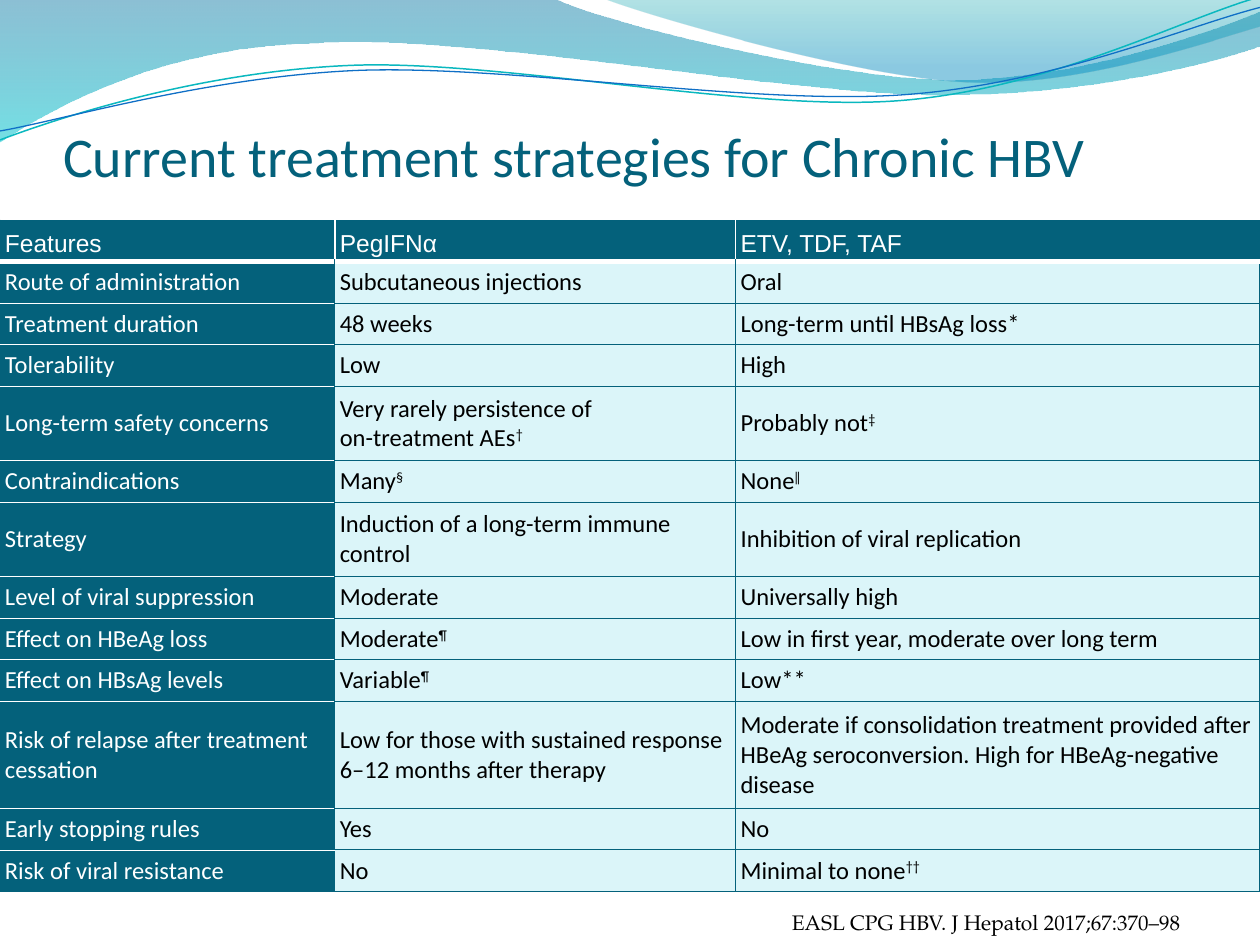
from math import cos, radians, sin
from lxml.etree import SubElement as Sub
from pptx import Presentation
from pptx.dml.color import RGBColor as RGB
from pptx.enum.text import MSO_ANCHOR as Anchor, MSO_AUTO_SIZE as Fit, PP_ALIGN as Align
from pptx.oxml.ns import qn
from pptx.util import Cm, Pt

TEAL = RGB(0x04, 0x61, 0x7B)
PALE = RGB(0xDB, 0xF5, 0xF9)
WHITE = RGB(0xFF, 0xFF, 0xFF)
BLACK = RGB(0, 0, 0)
AQUA = RGB(0x0A, 0xB8, 0xBF)
BLUE = RGB(0x0F, 0x6F, 0xC6)
DEEP = RGB(0x00, 0x74, 0xA1)
CYAN = RGB(0x00, 0xC6, 0xCF)
SEA = RGB(0x00, 0xA1, 0xA9)
SKY = RGB(0x00, 0x8B, 0xBF)

# Outlines in cm: a pair is a straight step, six numbers are a curve
BAND = [(0, 0), (11.18, -0.03), (12.09, 0.43, 16.87, 1.6, 19.25, 1.6),
        (21.67, 1.6, 24.33, 0.66, 25.4, 0.23), (25.43, 0.91),
        (24.97, 1.12, 22.1, 1.93, 18.95, 1.91), (15.8, 1.91, 9.7, 0.71, 6.53, 0.86),
        (3.28, 0.91, 1.17, 2.11, -0.03, 2.87)]
SWOOSH = [(12.17, -0.03), (12.93, 0.28, 17.32, 1.57, 19.53, 1.65),
          (21.74, 1.75, 24.41, 0.81, 25.4, 0.53), (25.4, 0)]
UPPER = [(0, 2.82), (1.22, 2.36, 4.01, 1.45, 7.04, 1.32),
         (10.03, 1.19, 15.06, 2.26, 18.11, 2.03), (21.16, 1.8, 23.83, 0.38, 25.35, -0.05)]
LOWER = [(0, 2.64), (1.19, 2.44, 4.17, 1.55, 7.19, 1.42),
         (10.24, 1.3, 15.16, 2.13, 18.21, 1.91), (21.23, 1.7, 23.9, 0.53, 25.4, 0.15)]
TILT = -2.7
HUB = (12.68, 1.46)

# Table text: a caret starts a superscript
ROWS = [
    ("Features", "PegIFNα", "ETV, TDF, TAF"),
    ("Route of administration", "Subcutaneous injections", "Oral"),
    ("Treatment duration", "48 weeks", "Long-term until HBsAg loss*"),
    ("Tolerability", "Low", "High"),
    ("Long-term safety concerns", "Very rarely persistence of \non-treatment AEs^†",
     "Probably not^‡"),
    ("Contraindications", "Many^§", "None^‖"),
    ("Strategy", "Induction of a long-term immune control", "Inhibition of viral replication"),
    ("Level of viral suppression", "Moderate", "Universally high"),
    ("Effect on HBeAg loss", "Moderate^¶", "Low in first year, moderate over long term"),
    ("Effect on HBsAg levels", "Variable^¶", "Low**"),
    ("Risk of relapse after treatment cessation",
     "Low for those with sustained response 6–12 months after therapy",
     "Moderate if consolidation treatment provided after HBeAg seroconversion. "
     "High for HBeAg-negative disease"),
    ("Early stopping rules", "Yes", "No"),
    ("Risk of viral resistance", "No", "Minimal to none^††"),
]
WIDTHS = (6.75, 8.08, 10.57)
HIGH = 13.53
TALL = {4: 1.5, 6: 1.5, 10: 2.16}
LOW = (HIGH - sum(TALL.values())) / (len(ROWS) - len(TALL))


def pairs(step):
    return list(zip(step[::2], step[1::2]))


def turn(steps, angle):
    """Turn all points of the steps about the hub."""
    c, s = cos(radians(angle)), sin(radians(angle))
    (hx, hy), out = HUB, []
    for step in steps:
        spots = [(x - hx, y - hy) for x, y in pairs(step)]
        out.append(sum(((hx + x * c - y * s, hy + x * s + y * c) for x, y in spots), ()))
    return out


def add_path(slide, steps, close):
    """Draw the steps as one outline with true curves."""
    ends = [(Cm(step[-2]), Cm(step[-1])) for step in steps]
    pen = slide.shapes.build_freeform(*ends[0])
    pen.add_line_segments(ends[1:], close=close)
    shape = pen.convert_to_shape()
    shape.shadow.inherit = False
    for node, step in zip(list(shape.element.iter(qn("a:lnTo"))), steps[1:]):
        if len(step) == 6:
            curve = node.makeelement(qn("a:cubicBezTo"))
            for x, y in pairs(step):
                Sub(curve, qn("a:pt"), x=str(Cm(x) - shape.left), y=str(Cm(y) - shape.top))
            node.getparent().replace(node, curve)
    return shape


def add_wave(slide, steps, stops):
    """Filled wave; each stop is position, colour, opacity in percent."""
    shape = add_path(slide, steps, True)
    shape.line.fill.background()
    shape.fill.gradient()
    shape.fill.gradient_angle = 270
    for stop, (pos, color, _) in zip(shape.fill.gradient_stops, stops):
        stop.position = pos
        stop.color.rgb = color
    for node, (_, _, alpha) in zip(shape.element.iter(qn("a:srgbClr")), stops):
        Sub(node, qn("a:alpha"), val=str(alpha * 1000))


def add_curve(slide, steps, color, width):
    shape = add_path(slide, turn(steps, -TILT), False)
    shape.rotation = TILT
    shape.fill.background()
    shape.line.color.rgb = color
    shape.line.width = Pt(width)


def style(para, font, size, color):
    para.font.name = font
    para.font.size = Pt(size)
    para.font.color.rgb = color


def set_text(holder, text, box, pads, font, size, color, align):
    """Move a placeholder to the front and fill it."""
    holder.left, holder.top, holder.width, holder.height = map(Cm, box)
    frame = holder.text_frame
    frame.text = text
    frame.word_wrap = True
    frame.auto_size = Fit.NONE
    frame.vertical_anchor = Anchor.BOTTOM
    (frame.margin_left, frame.margin_top,
     frame.margin_right, frame.margin_bottom) = map(Cm, pads)
    para = frame.paragraphs[0]
    para.alignment = align
    para.space_before = Pt(0)
    style(para, font, size, color)
    props = para._p.get_or_add_pPr()
    props.set("marL", "0")
    props.set("indent", "0")
    props.insert_element_before(props.makeelement(qn("a:buNone")), "a:tabLst", "a:defRPr")
    holder.element.getparent().append(holder.element)


def edges(row, col):
    """Left, right, top and bottom border of a cell."""
    outer, thick = (TEAL, 1), (WHITE, 3)
    inner = (WHITE, 1) if row == 0 else (TEAL, 0.75)
    rule = (WHITE, 0.5) if col == 0 else (TEAL, 0.75)
    return (outer if col == 0 else inner,
            outer if col == len(WIDTHS) - 1 else inner,
            {0: outer, 1: thick}.get(row, rule),
            {0: thick, len(ROWS) - 1: outer}.get(row, rule))


def set_cell(cell, text, row, col):
    dark = row == 0 or col == 0
    cell.fill.solid()
    cell.fill.fore_color.rgb = TEAL if dark else PALE
    cell.vertical_anchor = Anchor.BOTTOM if row == 0 else Anchor.MIDDLE
    cell.margin_left = cell.margin_right = Cm(0.1)
    cell.margin_top = cell.margin_bottom = Cm(0.08)
    # Text, line breaks and superscript
    para = cell.text_frame.paragraphs[0]
    style(para, "Arial" if row == 0 else "Calibri", 14, WHITE if dark else BLACK)
    main, _, mark = text.partition("^")
    for i, line in enumerate(main.split("\n")):
        if i:
            para.add_line_break()
        para.add_run().text = line
    if mark:
        run = para.add_run()
        run.text = mark
        run.font._element.set("baseline", "30000")
    # Borders
    props = cell._tc.get_or_add_tcPr()
    for i, (side, (color, width)) in enumerate(zip("LRTB", edges(row, col))):
        line = props.makeelement(qn("a:ln" + side), {"w": str(Pt(width))})
        Sub(Sub(line, qn("a:solidFill")), qn("a:srgbClr"), val=str(color))
        props.insert(i, line)


def add_grid(slide):
    grid = slide.shapes.add_table(len(ROWS), len(WIDTHS), Cm(0), Cm(4.44),
                                  Cm(sum(WIDTHS)), Cm(HIGH)).table
    grid.first_row = grid.horz_banding = False
    for col, width in zip(grid.columns, WIDTHS):
        col.width = Cm(width)
    for r, texts in enumerate(ROWS):
        grid.rows[r].height = Cm(TALL.get(r, LOW))
        for c, text in enumerate(texts):
            set_cell(grid.cell(r, c), text, r, c)


def main():
    deck = Presentation()
    deck.slide_width, deck.slide_height = Cm(25.4), Cm(19.05)
    slide = deck.slides.add_slide(deck.slide_layouts[1])
    title, body = slide.placeholders
    # Waves at the top
    add_wave(slide, BAND, [(0, DEEP, 45), (1, CYAN, 55)])
    add_wave(slide, SWOOSH, [(0, SEA, 30), (0.8, SKY, 45)])
    add_curve(slide, UPPER, AQUA, 0.85)
    add_curve(slide, LOWER, BLUE, 0.75)
    # Title, citation and comparison
    set_text(title, "Current treatment strategies for Chronic HBV", (1.27, 0, 22.86, 3.81),
             (0, 0.13, 0, 0), "Calibri", 32, TEAL, Align.LEFT)
    set_text(body, "EASL CPG HBV. J Hepatol 2017;67:370–98", (0.03, 17.98, 25.37, 1.07),
             (0.4, 0.2, 1.6, 0.2), "TeX Gyre Pagella", 12, BLACK, Align.RIGHT)
    add_grid(slide)
    deck.save("out.pptx")


if __name__ == "__main__":
    main()
